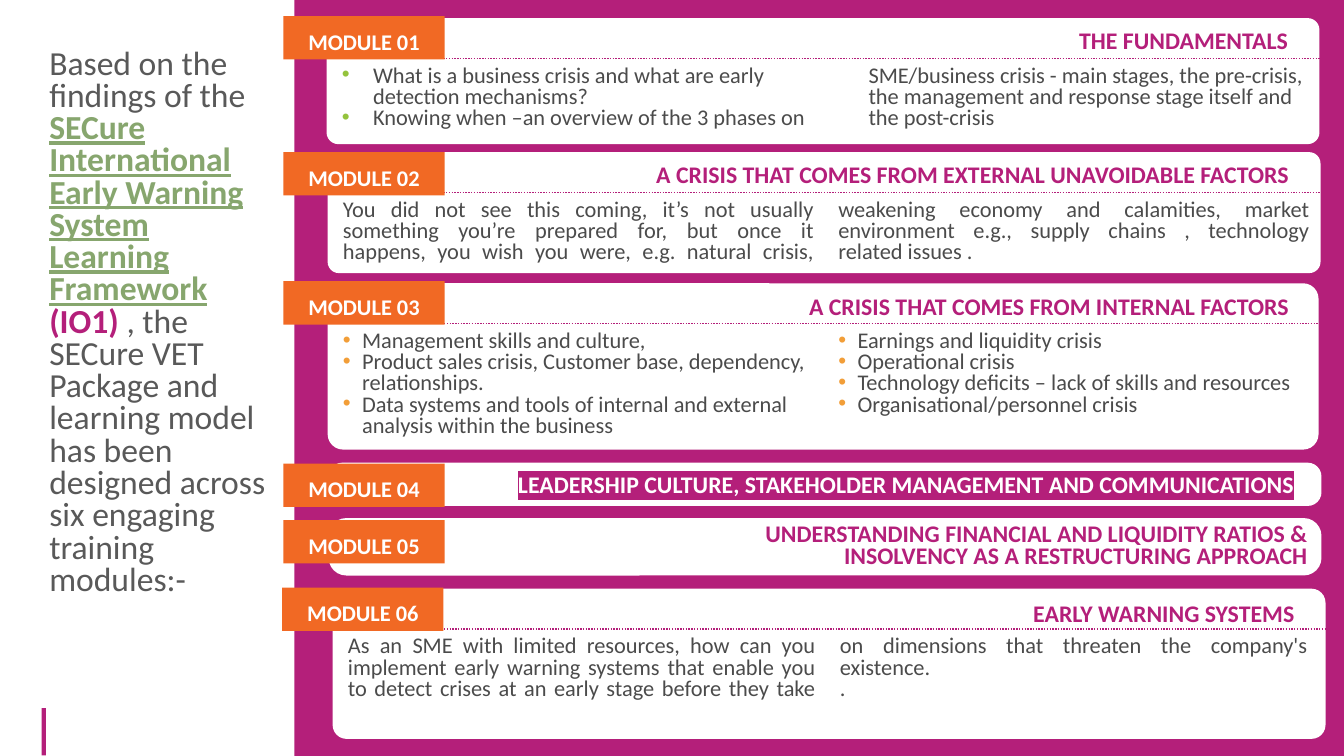
from dataclasses import dataclass
from typing import NamedTuple

from lxml.etree import SubElement
from pptx import Presentation
from pptx.dml.color import RGBColor
from pptx.enum.dml import MSO_LINE_DASH_STYLE as Dash
from pptx.enum.shapes import MSO_CONNECTOR as Connector, MSO_SHAPE as Preset
from pptx.enum.text import MSO_ANCHOR as Anchor, MSO_AUTO_SIZE as AutoSize, PP_ALIGN as Align
from pptx.oxml.ns import qn
from pptx.shapes.autoshape import Shape
from pptx.slide import Slide
from pptx.text.text import Font
from pptx.util import Inches, Pt

WIDTH, HEIGHT = Inches(13.333), Inches(7.5)
MAGENTA, ORANGE, WHITE = "B41F7A", "F16924", "FFFFFF"
GREEN, GREY, DARK = "87A66E", "595959", "4B4B4B"
FONT = "Calibri"
RULE_DROP, BODY_DROP = 5.33, 5.73
LABEL_WIDTH, LABEL_HEIGHT = 12, 5.73
BODY_HEIGHT = 7.73


class Area(NamedTuple):
    """Percent shares of the slide's width and height."""
    left: float
    top: float
    width: float
    height: float

    def lengths(self) -> tuple[int, int, int, int]:
        return (across(self.left), down(self.top), across(self.width), down(self.height))


class Bullet(NamedTuple):
    color: str
    indent: float


@dataclass
class Module:
    title: str
    panel: Area
    title_area: Area
    label_top: float
    label_left: float = 21.08
    corner: float = 0.093
    title_spacing: float | None = None
    highlighted: bool = False
    body: tuple[str, ...] = ()
    body_width: float = 73.4
    bullet: Bullet | None = None
    rule: tuple[float, float] = (24.3, 98.63)


MODULES = [
    Module("THE FUNDAMENTALS ", Area(24.3, 2.4, 73.88, 16.67), Area(48, 2.8, 48.98, 5.2), 2.13,
           body=("What is a business crisis and what are early detection mechanisms?",
                 "Knowing when –an overview of the 3 phases on SME/business crisis - main stages, "
                 "the pre-crisis, the management and response stage itself and the post-crisis"),
           bullet=Bullet("94C33D", 0.31), rule=(24.3, 98.18)),
    Module("A CRISIS THAT COMES FROM EXTERNAL UNAVOIDABLE FACTORS ",
           Area(24.38, 20.13, 73.88, 16), Area(48.08, 20.53, 48.98, 5.2), 20.13,
           body=("You did not see this coming, it’s not usually something you’re prepared for, "
                 "but once it happens, you wish you were, e.g. natural crisis, weakening economy "
                 "and calamities, market environment e.g., supply chains , technology "
                 "related issues .",)),
    Module("A CRISIS THAT COMES FROM INTERNAL FACTORS ",
           Area(24.38, 37.47, 73.73, 22), Area(48.08, 37.87, 48.98, 5.2), 37.2,
           body=("Management skills and culture,",
                 "Product sales crisis, Customer base, dependency, relationships.",
                 "Data systems and tools of internal and external analysis within the business",
                 "Earnings and liquidity crisis",
                 "Operational crisis",
                 "Technology deficits – lack of skills and resources",
                 "Organisational/personnel crisis"),
           bullet=Bullet("F29E38", 0.19), rule=(24.15, 98.1)),
    Module("LEADERSHIP CULTURE, STAKEHOLDER MANAGEMENT AND COMMUNICATIONS",
           Area(24.45, 61.2, 73.88, 5.73), Area(28.8, 61.47, 68.25, 5.2), 61.33,
           corner=0.319, highlighted=True),
    Module("UNDERSTANDING FINANCIAL AND LIQUIDITY RATIOS & INSOLVENCY AS A RESTRUCTURING APPROACH",
           Area(24.45, 68.53, 73.88, 7.6), Area(48, 68.93, 50.03, 7.07), 68.8,
           corner=0.309, title_spacing=15.4),
    Module("EARLY WARNING SYSTEMS",
           Area(24.75, 77.87, 73.88, 19.87), Area(28.95, 78.53, 68.1, 5.2), 77.73,
           label_left=21,
           body=("As an SME with limited resources, how can you implement early warning systems "
                 "that enable you to detect crises at an early stage before they take on "
                 "dimensions that threaten the company's existence.", "."),
           body_width=72.9, rule=(24.15, 98.63)),
]

INTRODUCTION = [
    ("Based on the findings of the ", GREY, False, False),
    ("SECure International Early Warning System Learning Framework ", GREEN, True, True),
    ("(IO1) ", MAGENTA, True, False),
    (", the SECure VET Package and learning model has been designed across "
     "six engaging training modules:-", GREY, False, False),
]


def across(share: float) -> int:
    return round(WIDTH * share / 100)


def down(share: float) -> int:
    return round(HEIGHT * share / 100)


def color(value: str) -> RGBColor:
    return RGBColor.from_string(value)


def style(font: Font, size: float, value: str, bold: bool = False) -> None:
    font.name, font.size, font.bold = FONT, Pt(size), bold
    font.color.rgb = color(value)


def add_block(slide: Slide, area: Area, fill: str, preset: Preset = Preset.RECTANGLE) -> Shape:
    shape = slide.shapes.add_shape(preset, *area.lengths())
    shape.shadow.inherit = False
    shape.fill.solid()
    shape.fill.fore_color.rgb = color(fill)
    shape.line.fill.background()
    return shape


def add_text(slide: Slide, area: Area) -> Shape:
    shape = slide.shapes.add_textbox(*area.lengths())
    shape.text_frame.word_wrap = True
    return shape


def add_introduction(slide: Slide) -> None:
    shape = add_block(slide, Area(2.93, 5.87, 18.08, 79.6), WHITE)
    shape.line.color.rgb = color(WHITE)
    shape.line.width = Pt(0.75)
    shape.text_frame.vertical_anchor = Anchor.TOP
    paragraph = shape.text_frame.paragraphs[0]
    paragraph.alignment = Align.LEFT
    paragraph.line_spacing = 0.8
    for text, value, bold, underline in INTRODUCTION:
        run = paragraph.add_run()
        run.text = text
        style(run.font, 24, value, bold)
        run.font.underline = underline


def add_title(slide: Slide, module: Module) -> None:
    frame = add_text(slide, module.title_area).text_frame
    frame.auto_size = AutoSize.SHAPE_TO_FIT_TEXT
    paragraph = frame.paragraphs[0]
    paragraph.alignment = Align.RIGHT
    if module.title_spacing:
        paragraph.line_spacing = Pt(module.title_spacing)
    run = paragraph.add_run()
    run.text = module.title
    style(paragraph.font, 17, WHITE if module.highlighted else MAGENTA, True)
    if module.highlighted:
        run.font.color.rgb = color(WHITE)
        highlight = SubElement(run.font._element, qn("a:highlight"))
        SubElement(highlight, qn("a:srgbClr"), val=MAGENTA)


def add_bullet(properties, bullet: Bullet) -> None:
    indent = Inches(bullet.indent)
    properties.set("marL", str(indent))
    properties.set("indent", str(-indent))
    SubElement(SubElement(properties, qn("a:buClr")), qn("a:srgbClr"), val=bullet.color)
    SubElement(properties, qn("a:buFont"), typeface="Arial")
    SubElement(properties, qn("a:buChar"), char="•")


def add_body(slide: Slide, module: Module) -> None:
    panel = module.panel
    frame = add_text(slide, Area(panel.left + 0.4, panel.top + BODY_DROP,
                                 module.body_width, BODY_HEIGHT)).text_frame
    frame._txBody.bodyPr.set("numCol", "2")
    frame._txBody.bodyPr.set("spcCol", str(Inches(0.24)))
    frame.text = "\n".join(module.body)
    for paragraph in frame.paragraphs:
        paragraph.alignment = Align.LEFT if module.bullet else Align.JUSTIFY
        paragraph.line_spacing = Pt(15.2)
        if module.bullet:
            add_bullet(paragraph._p.get_or_add_pPr(), module.bullet)
        style(paragraph.font, 16, DARK)


def add_rule(slide: Slide, module: Module) -> None:
    start, end = map(across, module.rule)
    level = down(module.panel.top + RULE_DROP)
    rule = slide.shapes.add_connector(Connector.STRAIGHT, start, level, end, level)
    rule.line.color.rgb = color(MAGENTA)
    rule.line.width = Pt(1)
    rule.line.dash_style = Dash.ROUND_DOT
    SubElement(rule._element.spPr, qn("a:effectLst"))


def add_label(slide: Slide, module: Module, number: int) -> None:
    area = Area(module.label_left, module.label_top, LABEL_WIDTH, LABEL_HEIGHT)
    frame = add_block(slide, area, ORANGE).text_frame
    frame.vertical_anchor = Anchor.MIDDLE
    paragraph = frame.paragraphs[0]
    paragraph.text = f"MODULE {number:02}"
    paragraph.alignment = Align.LEFT
    paragraph.line_spacing = Pt(24.4)
    paragraph._p.get_or_add_pPr().set("marL", str(Inches(0.15)))
    style(paragraph.font, 16, WHITE, True)


def main() -> None:
    presentation = Presentation()
    presentation.slide_width, presentation.slide_height = WIDTH, HEIGHT
    slide = presentation.slides.add_slide(presentation.slide_layouts[6])
    add_block(slide, Area(3.11, 93.67, 0.3, 6.27), MAGENTA)
    add_block(slide, Area(21.9, 0, 78.1, 100), MAGENTA)
    add_introduction(slide)
    for module in MODULES:
        panel = add_block(slide, module.panel, WHITE, Preset.ROUNDED_RECTANGLE)
        panel.adjustments[0] = module.corner
        if module.body:
            add_body(slide, module)
            add_rule(slide, module)
        add_title(slide, module)
    for number, module in enumerate(MODULES, 1):
        add_label(slide, module, number)
    presentation.save("out.pptx")


if __name__ == "__main__":
    main()
